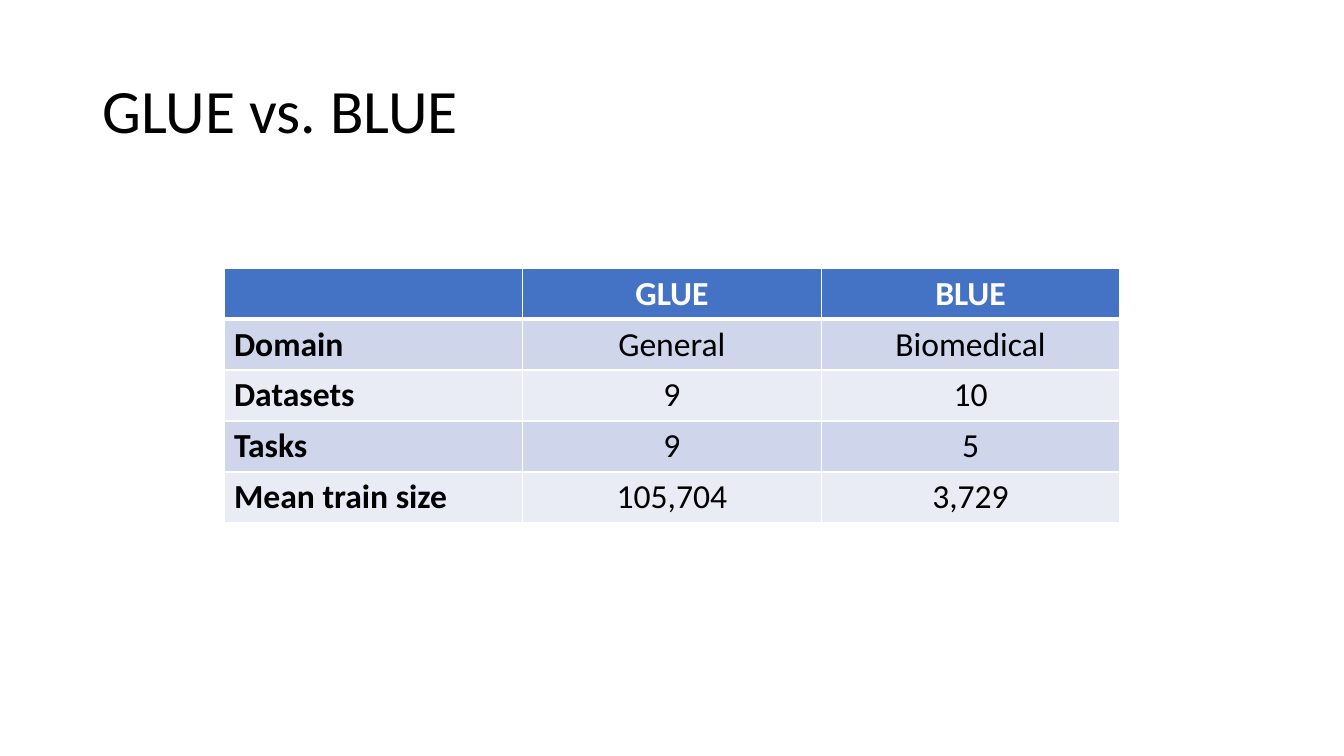
"""Build the GLUE vs. BLUE comparison slide."""
from lxml import etree
from pptx import Presentation
from pptx.dml.color import RGBColor
from pptx.enum.text import MSO_ANCHOR, PP_ALIGN
from pptx.oxml.ns import qn
from pptx.util import Pt

LEFT, CENTER = PP_ALIGN.LEFT, PP_ALIGN.CENTER
MIDDLE = MSO_ANCHOR.MIDDLE
BLACK = RGBColor(0x00, 0x00, 0x00)
WHITE = RGBColor(0xFF, 0xFF, 0xFF)
HEADER_BLUE = RGBColor(0x44, 0x72, 0xC4)
BANDS = (RGBColor(0xCF, 0xD5, 0xEA), RGBColor(0xE9, 0xEB, 0xF5))

BENCHMARKS = (
    ("", "GLUE", "BLUE"),
    ("Domain", "General", "Biomedical"),
    ("Datasets", "9", "10"),
    ("Tasks", "9", "5"),
    ("Mean train size", "105,704", "3,729"),
)


def write(frame, text, size=24, color=BLACK, bold=False, align=LEFT, spacing=1.0):
    paragraph = frame.paragraphs[0]
    paragraph.alignment = align
    paragraph.line_spacing = spacing
    paragraph.font.size = Pt(size)
    if text:
        run = paragraph.add_run()
        run.text = text
        run.font.name = "Calibri"
        run.font.size = Pt(size)
        run.font.bold = bold
        run.font.color.rgb = color


class ComparisonSlide:
    def __init__(self, deck):
        self.slide = deck.slides.add_slide(deck.slide_layouts[6])

    def title(self, text, left, top, width, height):
        box = self.slide.shapes.add_textbox(Pt(left), Pt(top), Pt(width), Pt(height))
        box.text_frame.word_wrap = True
        box.text_frame.vertical_anchor = MIDDLE
        write(box.text_frame, text, size=44, spacing=0.9)

    def border(self, cell, side, width):
        line = etree.SubElement(cell._tc.get_or_add_tcPr(), qn(f"a:ln{side}"), w=str(Pt(width)))
        fill = etree.SubElement(line, qn("a:solidFill"))
        etree.SubElement(fill, qn("a:srgbClr"), val=str(WHITE))

    def table(self, rows, left, top, column_width, row_height):
        columns = len(rows[0])
        table = self.slide.shapes.add_table(
            len(rows), columns, Pt(left), Pt(top),
            Pt(column_width * columns), Pt(row_height * len(rows))).table
        for column in table.columns:
            column.width = Pt(column_width)
        for r, labels in enumerate(rows):
            table.rows[r].height = Pt(row_height)
            for c, label in enumerate(labels):
                cell = table.cell(r, c)
                header = r == 0
                for side in "LRTB":
                    under_header = (r, side) in ((0, "B"), (1, "T"))
                    self.border(cell, side, 3 if under_header else 1)
                cell.fill.solid()
                cell.fill.fore_color.rgb = HEADER_BLUE if header else BANDS[(r - 1) % 2]
                write(cell.text_frame, label, color=WHITE if header else BLACK,
                      bold=header or c == 0, align=CENTER if c else LEFT)


def main():
    deck = Presentation()
    deck.slide_width, deck.slide_height = Pt(960), Pt(540)
    comparison = ComparisonSlide(deck)
    comparison.title("GLUE vs. BLUE", 66, 28.75, 828, 104.4)
    comparison.table(BENCHMARKS, 160, 191.5, 213.33, 36.4)
    deck.save("out.pptx")


if __name__ == "__main__":
    main()
